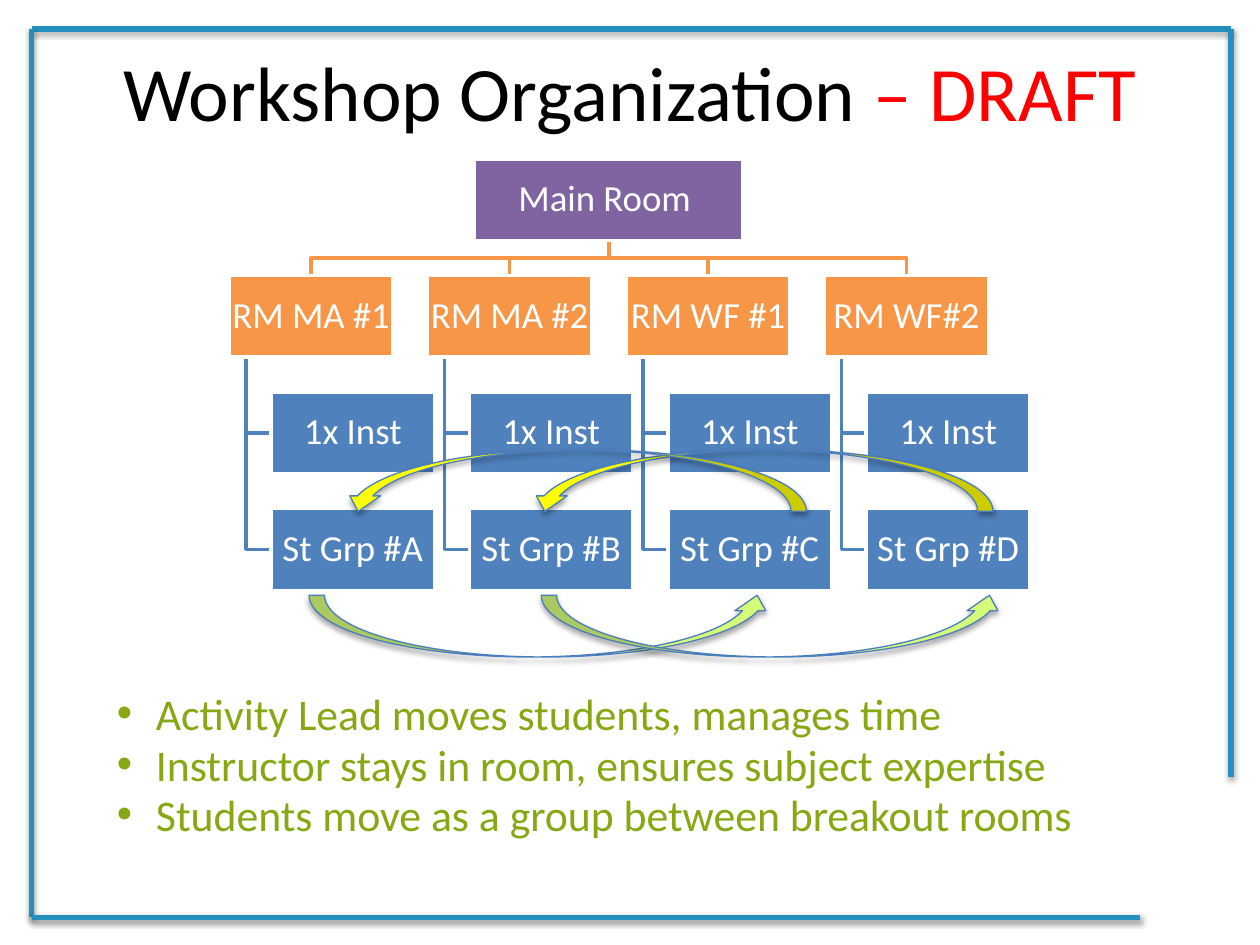
from dataclasses import dataclass

from lxml import etree
from pptx import Presentation
from pptx.dml.color import RGBColor
from pptx.enum.shapes import MSO_CONNECTOR, MSO_SHAPE
from pptx.enum.text import MSO_ANCHOR, PP_ALIGN
from pptx.oxml.ns import qn
from pptx.util import Emu, Inches, Pt

LINE = MSO_CONNECTOR.STRAIGHT
RECT = MSO_SHAPE.RECTANGLE
CURVE = MSO_SHAPE.CURVED_RIGHT_ARROW
MIDDLE = MSO_ANCHOR.MIDDLE
CENTER = PP_ALIGN.CENTER

WIDE, HIGH = 10, 7.5
LEFT, TOP = 1.82, 1.26
COL, ROW = 1.575, 0.925
BOX_W, BOX_H = 1.3 / COL, 0.65 / ROW
MAIN_W = 2.13 / COL
STEP = 0.33 / COL
STEM = STEP * 0.4
MID = 1.5 + BOX_W / 2
FONT = "Calibri"

COLORS = {
    "frame": "258FBD",
    "black": "000000",
    "red": "FF0000",
    "white": "FFFFFF",
    "main": "8064A2",
    "room": "F79646",
    "group": "4F81BD",
    "edge": "4B7EBC",
    "lime": "D5FC79",
    "yellow": "FFFF00",
    "note": "87A813",
}


@dataclass
class Box:
    text: str
    col: float
    row: float
    fill: str
    width: float = BOX_W


@dataclass
class Path:
    points: list[tuple[float, float]]
    color: str


@dataclass
class Arrow:
    col: float
    row: float
    turn: int
    fill: str


ROOMS = ["RM MA #1", "RM MA #2", "RM WF #1", "RM WF#2"]
GROUPS = ["St Grp #A", "St Grp #B", "St Grp #C", "St Grp #D"]
EDGES = [
    (2.5, 3.07, 97.7, 3.07),
    (97.7, 3.07, 97.7, 82.27),
    (2.5, 3.07, 2.5, 97.07),
    (2.5, 97.07, 90.5, 97.07),
]
ARROWS = [
    Arrow(1.57, 4.01, 270, "lime"),
    Arrow(2.74, 4.01, 270, "lime"),
    Arrow(2.68, 2.76, 90, "yellow"),
    Arrow(1.74, 2.76, 90, "yellow"),
]
NOTES = [
    "Activity Lead moves students, manages time",
    "Instructor stays in room, ensures subject expertise",
    "Students move as a group between breakout rooms",
]


def color(name: str) -> RGBColor:
    return RGBColor.from_string(COLORS[name])


def grid_x(col: float) -> Emu:
    return Inches(LEFT + COL * col)


def grid_y(row: float) -> Emu:
    return Inches(TOP + ROW * row)


def share_x(part: float) -> Emu:
    return Inches(WIDE * part / 100)


def share_y(part: float) -> Emu:
    return Inches(HIGH * part / 100)


def add_run(para, text: str, size: float, tint: str) -> None:
    run = para.add_run()
    run.text = text
    run.font.name = FONT
    run.font.size = Pt(size)
    run.font.color.rgb = color(tint)


def set_line(shape, tint: str, width: float) -> None:
    shape.line.color.rgb = color(tint)
    shape.line.width = Pt(width)


def add_glow(shape, alpha: int, dist: float) -> None:
    props = shape._element.spPr
    effect = etree.SubElement(props, qn("a:effectLst"))
    shade = etree.SubElement(
        effect, qn("a:outerShdw"), blurRad=str(Pt(3.1)), dist=str(Pt(dist)),
        dir="5400000", rotWithShape="0",
    )
    tint = etree.SubElement(shade, qn("a:srgbClr"), val=COLORS["black"])
    etree.SubElement(tint, qn("a:alpha"), val=str(alpha * 1000))


def draw_edge(slide, edge: tuple[float, float, float, float]) -> None:
    x1, y1, x2, y2 = edge
    line = slide.shapes.add_connector(
        LINE, share_x(x1), share_y(y1), share_x(x2), share_y(y2))
    set_line(line, "frame", 3)
    add_glow(line, 38, 1.6)


def draw_title(slide) -> None:
    box = slide.shapes.add_textbox(share_x(5), share_y(4), share_x(90), share_y(11.2))
    frame = box.text_frame
    frame.word_wrap = True
    frame.vertical_anchor = MIDDLE
    para = frame.paragraphs[0]
    para.alignment = CENTER
    add_run(para, "Workshop Organization ", 44, "black")
    add_run(para, "– DRAFT", 44, "red")


def draw_path(slide, path: Path) -> None:
    spots = [(grid_x(col), grid_y(row)) for col, row in path.points]
    pen = slide.shapes.build_freeform(*spots[0])
    pen.add_line_segments(spots[1:], close=False)
    shape = pen.convert_to_shape()
    shape.shadow.inherit = False
    shape.fill.background()
    set_line(shape, path.color, 2)


def draw_box(slide, box: Box) -> None:
    shape = slide.shapes.add_shape(
        RECT, grid_x(box.col), grid_y(box.row),
        Inches(box.width * COL), Inches(BOX_H * ROW))
    shape.shadow.inherit = False
    shape.fill.solid()
    shape.fill.fore_color.rgb = color(box.fill)
    set_line(shape, "white", 2)
    frame = shape.text_frame
    frame.word_wrap = False
    frame.vertical_anchor = MIDDLE
    frame.margin_left = frame.margin_right = Inches(0.01)
    frame.margin_top = frame.margin_bottom = Inches(0.01)
    para = frame.paragraphs[0]
    para.alignment = CENTER
    para.line_spacing = 0.9
    add_run(para, box.text, 21, "white")


def draw_arrow(slide, arrow: Arrow) -> None:
    width, height = Inches(0.49), Inches(3.68)
    shape = slide.shapes.add_shape(
        CURVE, grid_x(arrow.col) - width // 2, grid_y(arrow.row) - height // 2,
        width, height)
    shape.rotation = arrow.turn
    shape.fill.solid()
    shape.fill.fore_color.rgb = color(arrow.fill)
    set_line(shape, "edge", 0.75)
    add_glow(shape, 35, 1.8)


def draw_notes(slide) -> None:
    box = slide.shapes.add_textbox(
        share_x(8.3), share_y(73.07), share_x(83.4), share_y(17.2))
    frame = box.text_frame
    frame.word_wrap = True
    for i, text in enumerate(NOTES):
        para = frame.add_paragraph() if i else frame.paragraphs[0]
        para.line_spacing = 0.8
        if i:
            para.space_before = Pt(5)
        props = para._p.get_or_add_pPr()
        props.set("marL", str(Inches(0.31)))
        props.set("indent", str(-Inches(0.31)))
        etree.SubElement(props, qn("a:buFont"), typeface="Arial")
        etree.SubElement(props, qn("a:buChar"), char="•")
        add_run(para, text, 25, "note")


def draw_tree(slide) -> None:
    paths = []
    boxes = [Box("Main Room ", MID - MAIN_W / 2, 0, "main", MAIN_W)]
    fork = (1 + BOX_H) / 2
    for i, (room, group) in enumerate(zip(ROOMS, GROUPS)):
        half = i + BOX_W / 2
        paths.append(Path([(MID, BOX_H), (MID, fork), (half, fork), (half, 1)], "room"))
        boxes.append(Box(room, i, 1, "room"))
        for row, text in ((2, "1x Inst"), (3, group)):
            x, y = i + STEM, row + BOX_H / 2
            paths.append(Path([(x, 1 + BOX_H), (x, y), (i + STEP, y)], "group"))
            boxes.append(Box(text, i + STEP, row, "group"))
    for path in paths:
        draw_path(slide, path)
    for box in boxes:
        draw_box(slide, box)


def main() -> None:
    deck = Presentation()
    deck.slide_width, deck.slide_height = Inches(WIDE), Inches(HIGH)
    slide = deck.slides.add_slide(deck.slide_layouts[6])
    for edge in EDGES:
        draw_edge(slide, edge)
    draw_title(slide)
    draw_tree(slide)
    draw_notes(slide)
    for arrow in ARROWS:
        draw_arrow(slide, arrow)
    deck.save("out.pptx")


if __name__ == "__main__":
    main()
